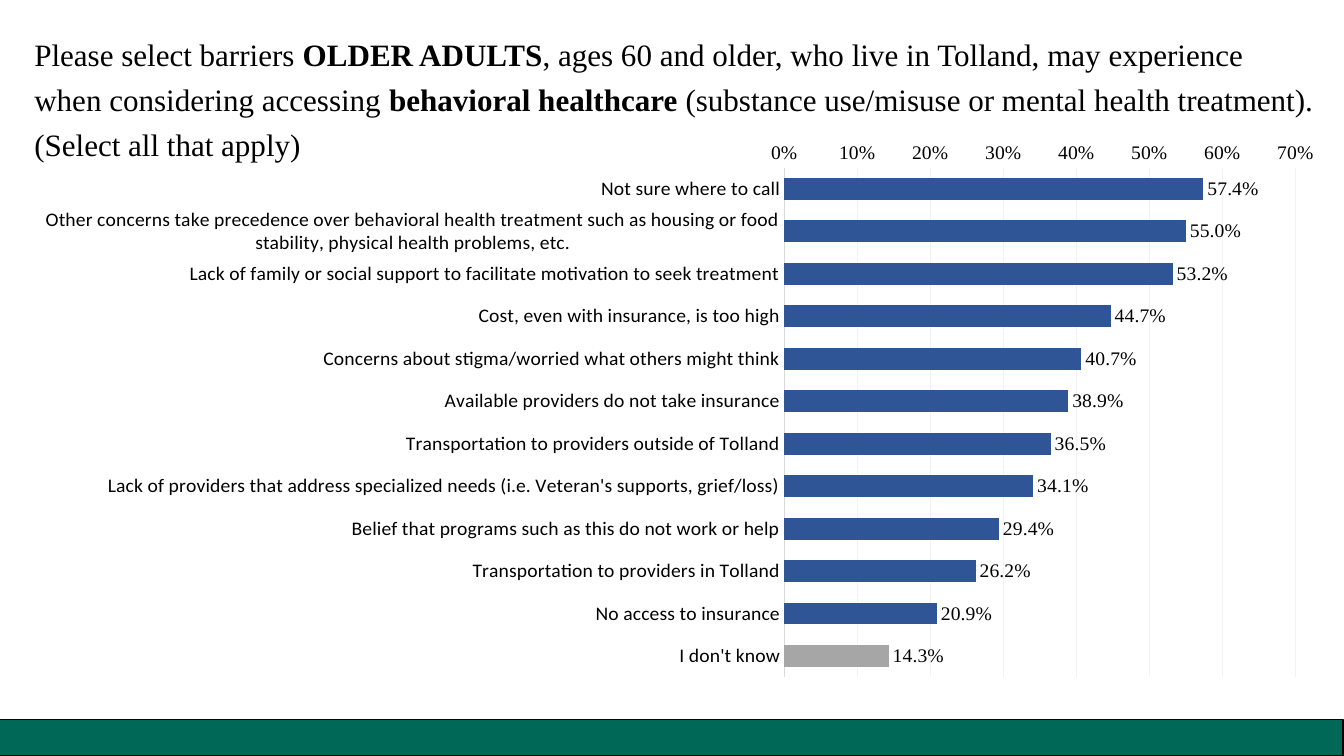
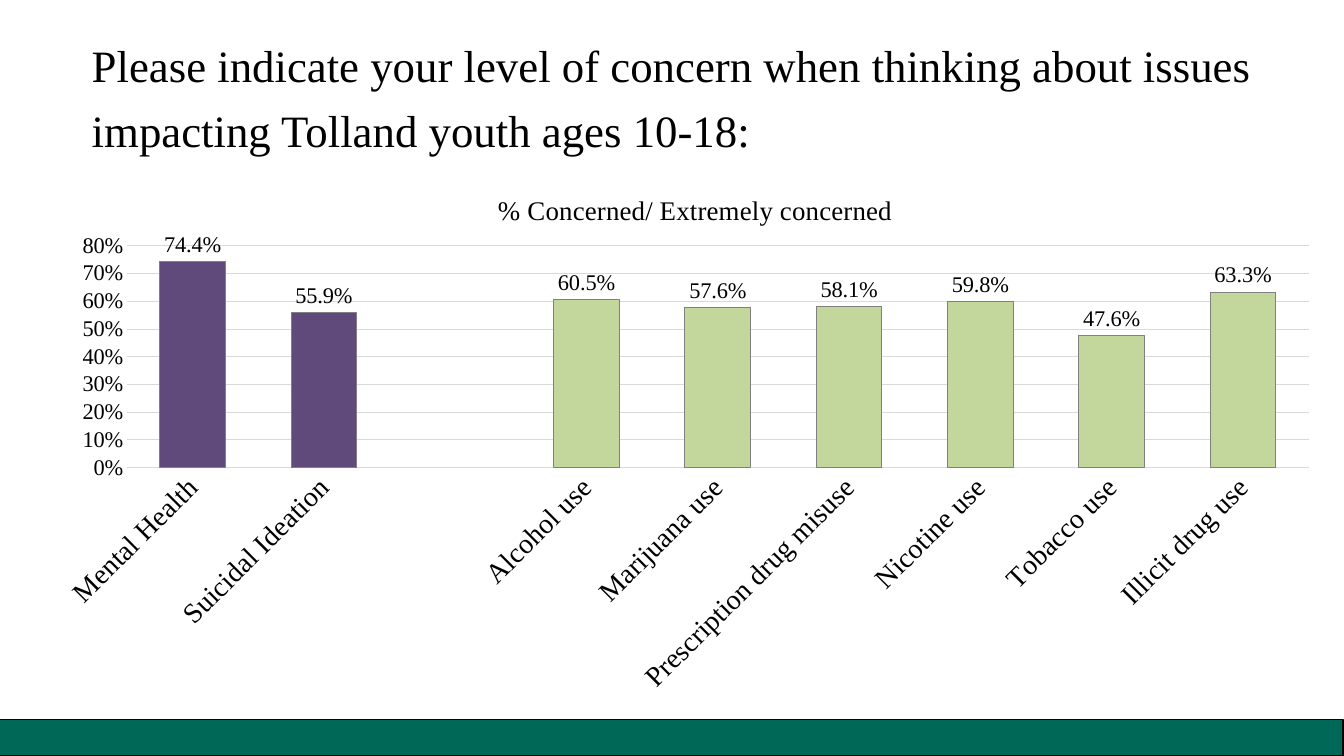
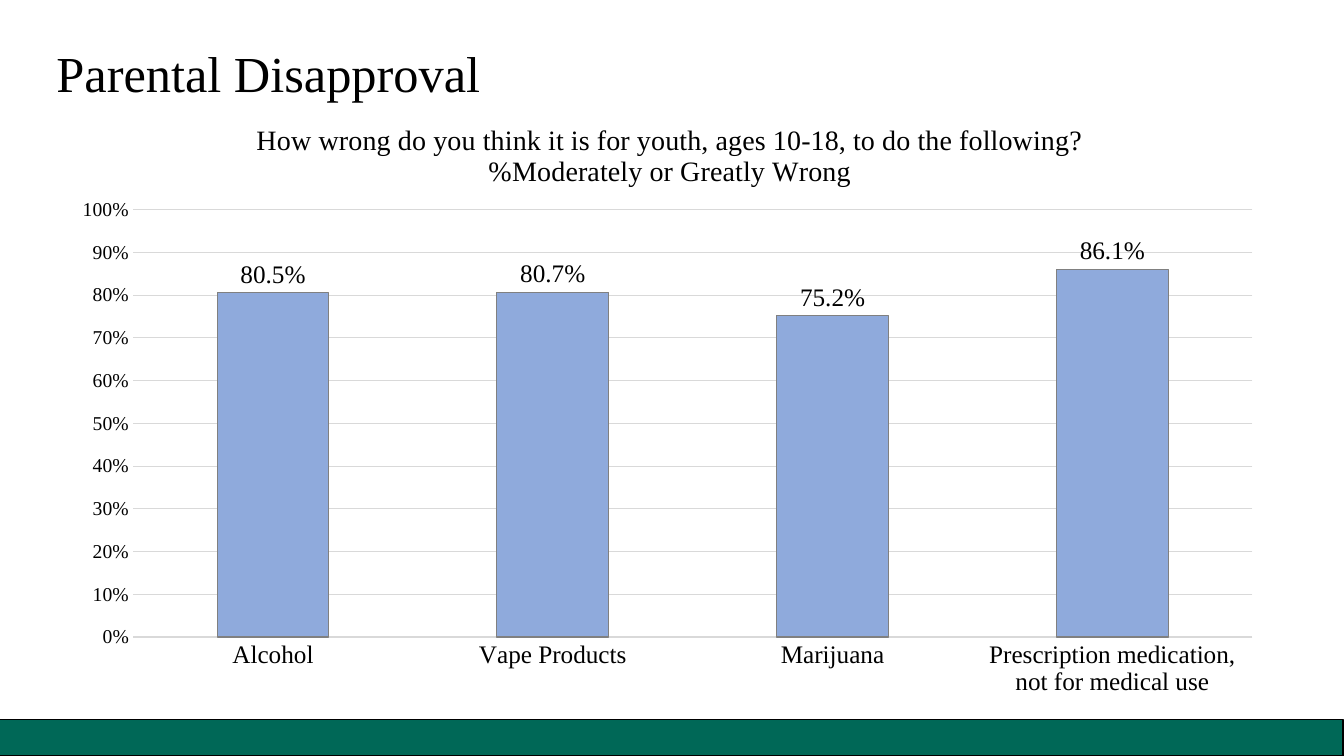
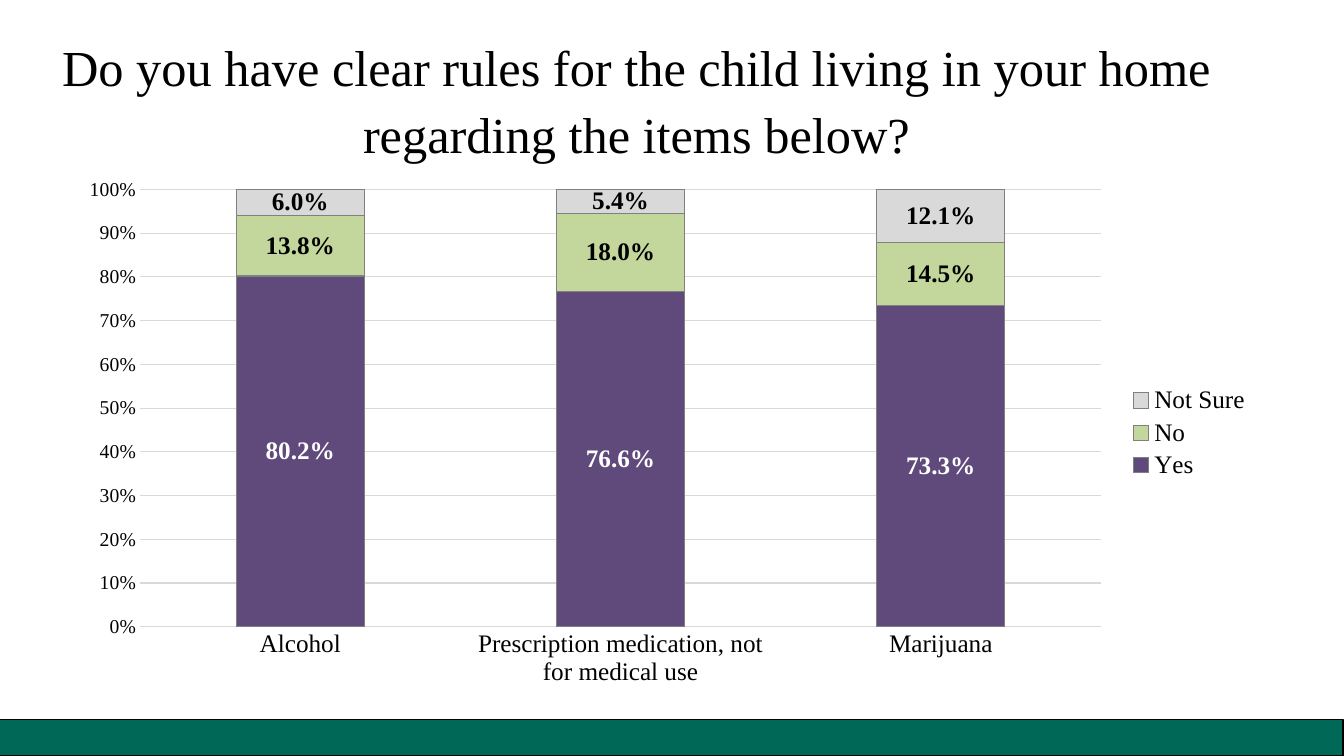
from lxml import etree
from pptx import Presentation
from pptx.chart.data import CategoryChartData
from pptx.dml.color import RGBColor
from pptx.enum.chart import XL_AXIS_CROSSES, XL_CHART_TYPE, XL_LABEL_POSITION, XL_LEGEND_POSITION, XL_TICK_MARK
from pptx.enum.shapes import MSO_SHAPE
from pptx.enum.text import MSO_ANCHOR, MSO_AUTO_SIZE, PP_ALIGN
from pptx.oxml.ns import qn
from pptx.util import Inches, Pt

BAR = XL_CHART_TYPE.BAR_CLUSTERED
COLUMN = XL_CHART_TYPE.COLUMN_CLUSTERED
STACKED = XL_CHART_TYPE.COLUMN_STACKED_100
OUTSIDE = XL_LABEL_POSITION.OUTSIDE_END
MIDDLE = XL_LABEL_POSITION.CENTER
LEGEND_RIGHT = XL_LEGEND_POSITION.RIGHT
AXIS_MAXIMUM = XL_AXIS_CROSSES.MAXIMUM
NO_TICK = XL_TICK_MARK.NONE
RECTANGLE = MSO_SHAPE.RECTANGLE
TOP = MSO_ANCHOR.TOP
NO_FIT = MSO_AUTO_SIZE.NONE
LEFT = PP_ALIGN.LEFT
CENTER = PP_ALIGN.CENTER

SERIF = "Times New Roman"
SANS = "Calibri"
BLACK = "000000"
WHITE = "FFFFFF"
GREEN = "006857"
BLUE = "2F5597"
LIGHT_BLUE = "8FAADC"
PURPLE = "604A7B"
LIME = "C3D69B"
SILVER = "D9D9D9"
PALE = "F2F2F2"
GREY = "A6A6A6"
OUTLINE = "808080"


def color(value):
    return RGBColor.from_string(value)


def style_font(font, size, name=SERIF, shade=BLACK, bold=False):
    font.size = Pt(size)
    font.name = name
    font.bold = bold
    font.color.rgb = color(shade)


def write(para, text, **style):
    span = para.add_run()
    span.text = text
    style_font(span.font, **style)


def paint(target, fill, line=None, width=0.75):
    target.fill.solid()
    target.fill.fore_color.rgb = color(fill)
    if line:
        target.line.color.rgb = color(line)
        target.line.width = Pt(width)
    else:
        target.line.fill.background()


def place(element, index, **fractions):
    for old in element.findall(qn("c:layout")):
        element.remove(old)
    layout = etree.Element(qn("c:layout"))
    manual = etree.SubElement(layout, qn("c:manualLayout"))
    settings = {"xMode": "edge", "yMode": "edge", **fractions}
    if "w" in fractions:
        settings = {"layoutTarget": "inner", **settings}
    for name, value in settings.items():
        etree.SubElement(manual, qn(f"c:{name}")).set("val", str(value))
    element.insert(index, layout)


class Survey:
    def __init__(self):
        self.deck = Presentation()
        self.deck.slide_width = Inches(13.33)
        self.deck.slide_height = Inches(7.5)
        self.page = None

    def add_page(self):
        self.page = self.deck.slides.add_slide(self.deck.slide_layouts[5])
        band = self.page.shapes.add_shape(RECTANGLE, Inches(-0.01), Inches(7.14), Inches(13.33), Inches(0.36))
        band.shadow.inherit = False
        paint(band, GREEN, BLACK, 1)
        band.line.width = Pt(1)

    def title(self, area, paragraphs, size, align=LEFT, spacing=1.2):
        box = self.page.shapes.title
        box.left, box.top, box.width, box.height = map(Inches, area)
        frame = box.text_frame
        frame.word_wrap = True
        frame.auto_size = NO_FIT
        frame.vertical_anchor = TOP
        for number, spans in enumerate(paragraphs):
            para = frame.add_paragraph() if number else frame.paragraphs[0]
            para.alignment = align
            para.line_spacing = spacing
            for text, bold in spans:
                write(para, text, size=size, bold=bold)

    def chart(self, kind, area, plot_area, categories, series, gap, base_size):
        data = CategoryChartData()
        data.categories = categories
        for name, values in series.items():
            data.add_series(name, values)
        chart = self.page.shapes.add_chart(kind, *map(Inches, area), data).chart
        style_font(chart.font, base_size)
        chart.has_title = False
        chart.has_legend = False
        plot = chart.plots[0]
        plot.gap_width = gap
        plot.vary_by_categories = False
        left, top, width, height = area
        x, y, w, h = plot_area
        place(chart._chartSpace.chart.plotArea, 0,
              x=round((x - left) / width, 4), y=round((y - top) / height, 4),
              w=round(w / width, 4), h=round(h / height, 4))
        return chart

    def axes(self, chart, category_size, value_size, maximum, category_font=SERIF, grid=SILVER):
        labels, values = chart.category_axis, chart.value_axis
        for axis, size, name in ((labels, category_size, category_font), (values, value_size, SERIF)):
            axis.major_tick_mark = NO_TICK
            axis.minor_tick_mark = NO_TICK
            style_font(axis.tick_labels.font, size, name)
        labels.has_major_gridlines = False
        labels.format.line.color.rgb = color(SILVER)
        labels.format.line.width = Pt(0.75)
        values.format.line.fill.background()
        values.minimum_scale = 0
        values.maximum_scale = maximum
        values.major_unit = 0.1
        values.tick_labels.number_format = "0%"
        values.tick_labels.number_format_is_linked = False
        values.has_major_gridlines = True
        values.major_gridlines.format.line.color.rgb = color(grid)
        values.major_gridlines.format.line.width = Pt(0.75)

    def bars(self, series, fill, label_size, line=OUTLINE, points=None, position=OUTSIDE, **label_style):
        paint(series.format, fill, line)
        for index, shade in (points or {}).items():
            paint(series.points[index].format, shade, line)
        labels = series.data_labels
        labels.show_value = True
        labels.number_format = "0.0%"
        labels.number_format_is_linked = False
        labels.position = position
        style_font(labels.font, label_size, **label_style)

    def chart_title(self, chart, lines, size, x, y):
        chart.has_title = True
        frame = chart.chart_title.text_frame
        for number, text in enumerate(lines):
            para = frame.add_paragraph() if number else frame.paragraphs[0]
            write(para, text, size=size)
        place(chart.chart_title._element, 1, x=x, y=y)

    def legend(self, chart, size):
        chart.has_legend = True
        chart.legend.position = LEGEND_RIGHT
        chart.legend.include_in_layout = False
        style_font(chart.legend.font, size)


def barriers(survey):
    survey.add_page()
    survey.title((0.24, 0.23, 12.91, 1.43), [
        [("Please select barriers ", False), ("OLDER ADULTS", True),
         (", ages 60 and older, who live in Tolland, may experience when considering accessing ", False),
         ("behavioral healthcare ", True),
         ("(substance use/misuse or mental health treatment).", False)],
        [("(Select all that apply)", False)],
    ], 22.2)
    shares = {
        "Not sure where to call": 0.574,
        "Other concerns take precedence over behavioral health treatment such as housing or food stability, "
        "physical health problems, etc.": 0.55,
        "Lack of family or social support to facilitate motivation to seek treatment": 0.532,
        "Cost, even with insurance, is too high": 0.447,
        "Concerns about stigma/worried what others might think": 0.407,
        "Available providers do not take insurance": 0.389,
        "Transportation to providers outside of Tolland": 0.365,
        "Lack of providers that address specialized needs (i.e. Veteran's supports, grief/loss)": 0.341,
        "Belief that programs such as this do not work or help": 0.294,
        "Transportation to providers in Tolland": 0.262,
        "No access to insurance": 0.209,
        "I don't know": 0.143,
    }
    chart = survey.chart(BAR, (0.19, 1.41, 13.11, 5.72), (7.78, 1.53, 5.07, 5.18),
                         list(shares), {"Series 1": list(shares.values())}, 94, 10)
    survey.axes(chart, 14, 14, 0.7, SANS, PALE)
    chart.category_axis.reverse_order = True
    chart.category_axis.crosses = AXIS_MAXIMUM
    survey.bars(chart.series[0], BLUE, 14, line=None, points={len(shares) - 1: GREY})


def concerns(survey):
    survey.add_page()
    survey.title((0.81, 0.22, 11.71, 1.43), [[(
        "Please indicate your level of concern when thinking about issues impacting Tolland youth ages 10-18:",
        False)]], 32)
    shares = {
        "Mental Health": 0.744,
        "Suicidal Ideation": 0.559,
        "": None,
        "Alcohol use": 0.605,
        "Marijuana use": 0.576,
        "Prescription drug misuse": 0.581,
        "Nicotine use": 0.598,
        "Tobacco use": 0.476,
        "Illicit drug use": 0.633,
    }
    chart = survey.chart(COLUMN, (0.4, 1.65, 12.83, 5.34), (1.26, 2.44, 11.72, 2.2),
                         list(shares), {"Series 1": list(shares.values())}, 100, 16)
    survey.axes(chart, 20, 16, 0.8)
    label_body = chart.category_axis._element.find(qn("c:txPr")).find(qn("a:bodyPr"))
    label_body.set("rot", "-2700000")
    label_body.set("vert", "horz")
    survey.bars(chart.series[0], LIME, 16, points={0: PURPLE, 1: PURPLE})
    survey.chart_title(chart, ["% Concerned/ Extremely concerned"], 19.2, 0.35, 0.04)


def disapproval(survey):
    survey.add_page()
    survey.title((0.46, 0.25, 11.71, 1.43), [[("Parental Disapproval", False)]], 36)
    shares = {
        "Alcohol": 0.805,
        "Vape Products": 0.807,
        "Marijuana": 0.752,
        "Prescription medication, not for medical use": 0.861,
    }
    chart = survey.chart(COLUMN, (0.58, 0.95, 12.08, 6.07), (1.32, 2.08, 11.1, 4.24),
                         list(shares), {"Series 1": list(shares.values())}, 150, 20)
    survey.axes(chart, 18, 14, 1)
    survey.bars(chart.series[0], LIGHT_BLUE, 18)
    survey.chart_title(chart, ["How wrong do you think it is for youth, ages 10-18, to do the following?",
                               "%Moderately or Greatly Wrong"], 20, 0.16, 0.04)


def rules(survey):
    survey.add_page()
    survey.title((0.46, 0.25, 11.71, 1.43), [[(
        "Do you have clear rules for the child living in your home regarding the items below?", False)]],
        36, CENTER, 1.1)
    answers = {
        "Yes": (0.802, 0.766, 0.733),
        "No": (0.138, 0.18, 0.145),
        "Not Sure": (0.06, 0.054, 0.121),
    }
    chart = survey.chart(STACKED, (0.65, 1.68, 11.86, 5.23), (1.39, 1.88, 9.53, 4.34),
                         ["Alcohol", "Prescription medication, not for medical use", "Marijuana"],
                         answers, 150, 14)
    chart.plots[0].overlap = 100
    survey.axes(chart, 18, 14, 1)
    for series, fill, shade in zip(chart.series, (PURPLE, LIME, SILVER), (WHITE, BLACK, BLACK)):
        survey.bars(series, fill, 18, position=MIDDLE, shade=shade, bold=True)
    survey.legend(chart, 18)


def main():
    survey = Survey()
    for build in (barriers, concerns, disapproval, rules):
        build(survey)
    survey.deck.save("out.pptx")


if __name__ == "__main__":
    main()
